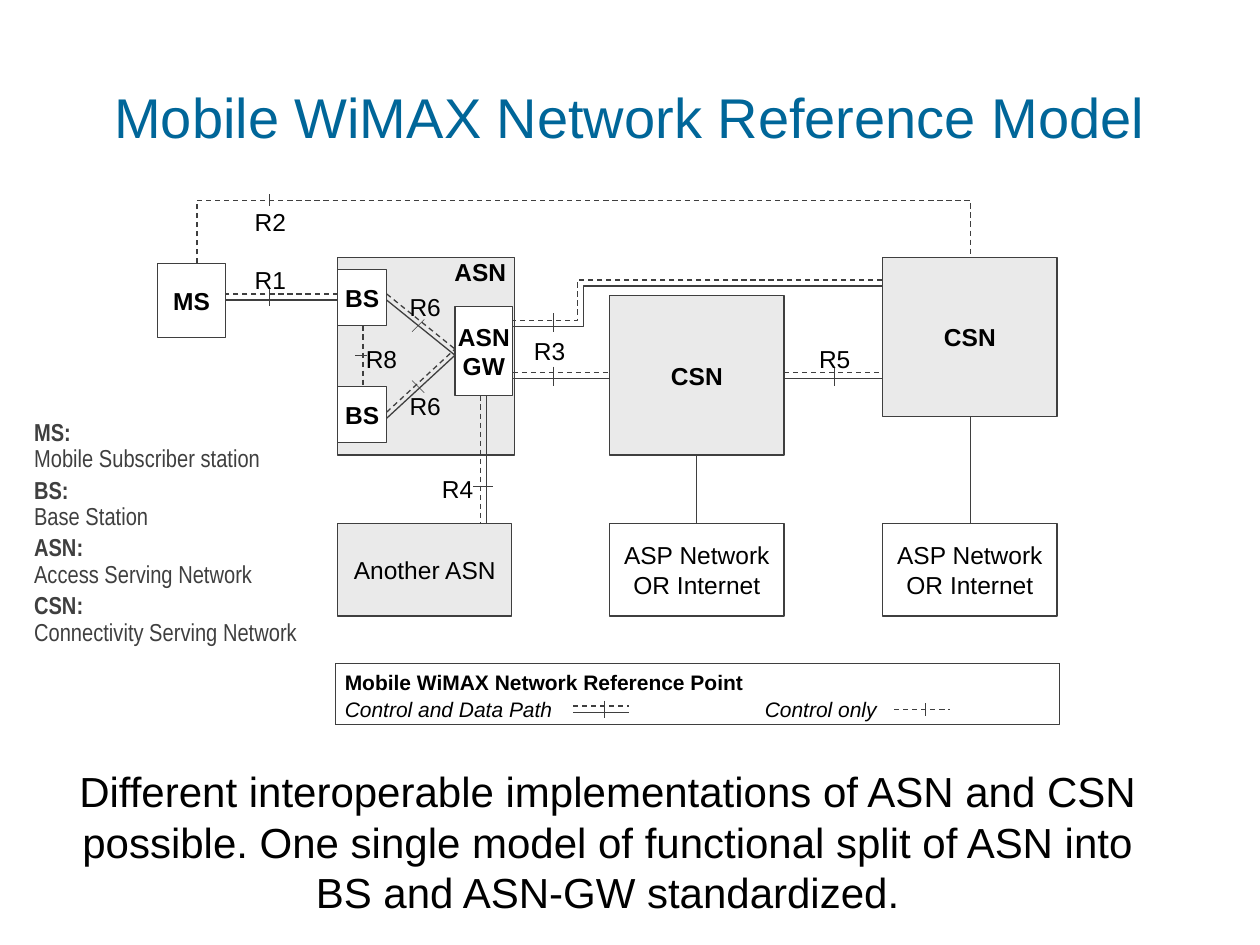
from dataclasses import dataclass

from lxml.etree import SubElement
from pptx import Presentation
from pptx.dml.color import RGBColor
from pptx.enum.dml import MSO_LINE_DASH_STYLE as Dash
from pptx.enum.shapes import MSO_CONNECTOR as Connector, MSO_SHAPE as Preset
from pptx.enum.text import MSO_ANCHOR as Anchor, PP_ALIGN as Align
from pptx.oxml.ns import qn
from pptx.util import Pt

COLORS = {
    "title": "006699",
    "line": "3F3F3F",
    "text": "000000",
    "network": "EAEAEA",
    "node": "FFFFFF",
}
GAP = 3.5  # distance between the control path and the data path
Point = tuple[float, float]


@dataclass
class Box:
    left: float
    top: float
    width: float
    height: float
    lines: tuple[str, ...] = ()
    fill: str = "node"
    bold: bool = True
    inset: float = 0
    wrap: bool = True


@dataclass
class Label:
    left: float
    top: float
    text: str
    width: float = 18
    bold: bool = False


@dataclass
class Path:
    start: Point
    end: Point
    shift: Point = (0, -GAP)  # from the data path to the control path


def color(name: str) -> RGBColor:
    return RGBColor.from_string(COLORS[name])


def set_frame(frame, inset: Point = (0, 0), wrap=True, anchor=Anchor.TOP) -> None:
    values = {
        "margin_left": Pt(inset[0]), "margin_right": Pt(inset[0]),
        "margin_top": Pt(inset[1]), "margin_bottom": Pt(inset[1]),
        "word_wrap": wrap, "vertical_anchor": anchor,
    }
    for name, value in values.items():
        setattr(frame, name, value)


def next_paragraph(frame, index: int, **formats):
    paragraph = frame.paragraphs[0] if index == 0 else frame.add_paragraph()
    for name, value in formats.items():
        setattr(paragraph, name, value)
    return paragraph


def add_run(paragraph, text: str, size=14, name="Arial", tone="text", **formats) -> None:
    run = paragraph.add_run()
    run.text = text
    run.font.color.rgb = color(tone)
    for key, value in {"size": Pt(size), "name": name, **formats}.items():
        setattr(run.font, key, value)


def style_line(line, width=0.75, dash=None) -> None:
    line.color.rgb = color("line")
    line.width = Pt(width)
    if dash:
        line.dash_style = dash


def add_textbox(slide, left, top, width, height, **formats):
    shape = slide.shapes.add_textbox(Pt(left), Pt(top), Pt(width), Pt(height))
    set_frame(shape.text_frame, **formats)
    return shape.text_frame


def add_centered(slide, area, text, size, tone="text", **formats) -> None:
    frame = add_textbox(slide, *area, **formats)
    add_run(next_paragraph(frame, 0, alignment=Align.CENTER), text, size, tone=tone)


def add_box(slide, box: Box) -> None:
    shape = slide.shapes.add_shape(
        Preset.RECTANGLE, Pt(box.left), Pt(box.top), Pt(box.width), Pt(box.height))
    shape.shadow.inherit = False
    shape.fill.solid()
    shape.fill.fore_color.rgb = color(box.fill)
    style_line(shape.line)
    set_frame(shape.text_frame, (box.inset, box.inset / 2), box.wrap, Anchor.MIDDLE)
    for index, text in enumerate(box.lines):
        paragraph = next_paragraph(shape.text_frame, index, alignment=Align.CENTER)
        add_run(paragraph, text, bold=box.bold)


def add_line(slide, start: Point, end: Point, width=0.75, dash=None) -> None:
    connector = slide.shapes.add_connector(
        Connector.STRAIGHT, *(Pt(value) for value in (*start, *end)))
    style_line(connector.line, width, dash)
    SubElement(connector._element.spPr, qn("a:effectLst"))


def add_double(slide, path: Path) -> None:
    add_line(slide, path.start, path.end)
    shifted = [(x + path.shift[0], y + path.shift[1]) for x, y in (path.start, path.end)]
    add_line(slide, *shifted, dash=Dash.DASH)


def add_tick(slide, x: float, y: float, dx: float, dy: float) -> None:
    add_line(slide, (x - dx, y - dy), (x + dx, y + dy), width=0.25)


def add_polyline(slide, points: list[Point], dash=None) -> None:
    first, *rest = [(Pt(x), Pt(y)) for x, y in points]
    builder = slide.shapes.build_freeform(*first)
    builder.add_line_segments(rest, close=False)
    shape = builder.convert_to_shape()
    shape.shadow.inherit = False
    shape.fill.background()
    style_line(shape.line, dash=dash)


def add_glossary(slide) -> None:
    terms = {"MS:": "Mobile Subscriber station", "BS:": "Base Station",
             "ASN:": "Access Serving Network", "CSN:": "Connectivity Serving Network"}
    frame = add_textbox(slide, 19.5, 240, 166, 132.5)
    for index, (term, meaning) in enumerate(terms.items()):
        paragraph = next_paragraph(frame, index, line_spacing=0.9, space_before=Pt(2.8))
        add_run(paragraph, term, name="Arial Narrow", tone="line", bold=True)
        paragraph.add_line_break()
        add_run(paragraph, meaning, name="Arial Narrow", tone="line", bold=False)


def add_legend(slide) -> None:
    shape = slide.shapes.add_shape(Preset.RECTANGLE, Pt(191.5), Pt(379), Pt(414), Pt(35))
    shape.shadow.inherit = False
    shape.fill.background()
    style_line(shape.line, 0.25, Dash.ROUND_DOT)
    frame = shape.text_frame
    set_frame(frame, (5.5, 3))
    rows = [("Mobile WiMAX Network Reference Point", {"bold": True}),
            ("Control and Data Path\t\t\tControl only", {"italic": True})]
    for index, (text, formats) in enumerate(rows):
        paragraph = next_paragraph(frame, index, alignment=Align.LEFT, line_spacing=1.05)
        add_run(paragraph, text, 12, **formats)
    # Tab stops that place the second entry
    tabs = SubElement(paragraph._p.get_or_add_pPr(), qn("a:tabLst"))
    for position in (120, 180, 240):
        SubElement(tabs, qn("a:tab"), pos=str(Pt(position)), algn="l")
    # Line samples
    add_double(slide, Path((327.5, 407), (359.5, 407)))
    add_tick(slide, 345.5, 405.5, 0, 5)
    add_line(slide, (511, 405.5), (543, 405.5), dash=Dash.DASH)
    add_tick(slide, 528.5, 405.5, 0, 3.5)


BOXES = [
    Box(193, 147, 101, 113, fill="network"),
    *(Box(193, top, 28, 32, ("BS",)) for top in (154, 221)),
    Box(260, 175, 33, 51, ("ASN GW",)),
    Box(90, 150.5, 39, 42.5, ("MS",), wrap=False),
    Box(193, 299, 99.5, 53, ("Another ASN",), "network", bold=False),
    *(Box(left, top, 99.5, 91, ("CSN",), "network", inset=7.2)
      for left, top in ((348.5, 169), (504.5, 147))),
    *(Box(left, 299, 99.5, 53, ("ASP Network", "OR Internet"), bold=False)
      for left in (348.5, 504.5)),
]
PATHS = [
    Path((193, 171.5), (129, 171.5)),  # R1
    Path((221, 171.5), (260, 203)),  # R6
    Path((221, 239), (260, 203)),  # R6
    Path((278, 226), (278, 299), (-GAP, 0)),  # R4
    Path((293, 216.5), (348.5, 216.5)),  # R3
    Path((448, 216.5), (504.5, 216.5)),  # R5
]
TICKS = [
    (154, 169.5, 0, 5.5), (206.5, 203, 3.5, 0), (239, 186, 3.5, -3.5),
    (239, 221, 3.5, 3.5), (276, 278, 5.5, 0), (316, 215, 0, 5.5),
    (476.5, 215, 0, 5.5), (154, 114.5, 0, 3.5), (316, 184.5, 0, 5.5),
]
LABELS = [
    Label(256.5, 147, "ASN", 36, True), Label(234, 167, "R6"), Label(234, 223.5, "R6"),
    Label(209, 196.5, "R8"), Label(145.5, 151.5, "R1"), Label(252.5, 271, "R4"),
    Label(305, 192, "R3"), Label(468, 196.5, "R5"), Label(145.5, 118.5, "R2"),
]


def main() -> None:
    presentation = Presentation()
    presentation.slide_width, presentation.slide_height = Pt(720), Pt(540)
    slide = presentation.slides.add_slide(presentation.slide_layouts[6])

    # Title and glossary
    add_centered(slide, (36, 21.5, 648, 90), "Mobile WiMAX Network Reference Model",
                 32, "title", inset=(3, 3), anchor=Anchor.MIDDLE)
    add_glossary(slide)

    # Network nodes and their links
    for box in BOXES:
        add_box(slide, box)
    for path in PATHS:
        add_double(slide, path)
    add_line(slide, (207.5, 186), (207.5, 221), dash=Dash.DASH)  # R8
    for x, top in ((398, 260), (554.5, 238)):
        add_line(slide, (x, top), (x, 299))
    add_polyline(slide, [(112.5, 150.5), (112.5, 114.5), (554.5, 114.5), (554.5, 147)],
                 Dash.DASH)  # R2
    for shift, dash in ((0, None), (GAP, Dash.DASH)):  # R3 to the far CSN
        high, low, bend = 163.5 - shift, 186.5 - shift, 333.5 - shift
        add_polyline(slide, [(504, high), (bend, high), (bend, low), (293, low)], dash)

    # Reference point marks and names
    for tick in TICKS:
        add_tick(slide, *tick)
    for label in LABELS:
        frame = add_textbox(slide, label.left, label.top, label.width, 17, wrap=False)
        add_run(next_paragraph(frame, 0, alignment=Align.CENTER), label.text, bold=label.bold)

    # Legend and conclusion
    add_legend(slide)
    add_centered(slide, (34.5, 434, 625.5, 94.5),
                 "Different interoperable implementations of ASN and CSN possible. "
                 "One single model of functional split of ASN into BS and ASN-GW "
                 "standardized.", 24, inset=(7.2, 3.6))
    presentation.save("out.pptx")


if __name__ == "__main__":
    main()
